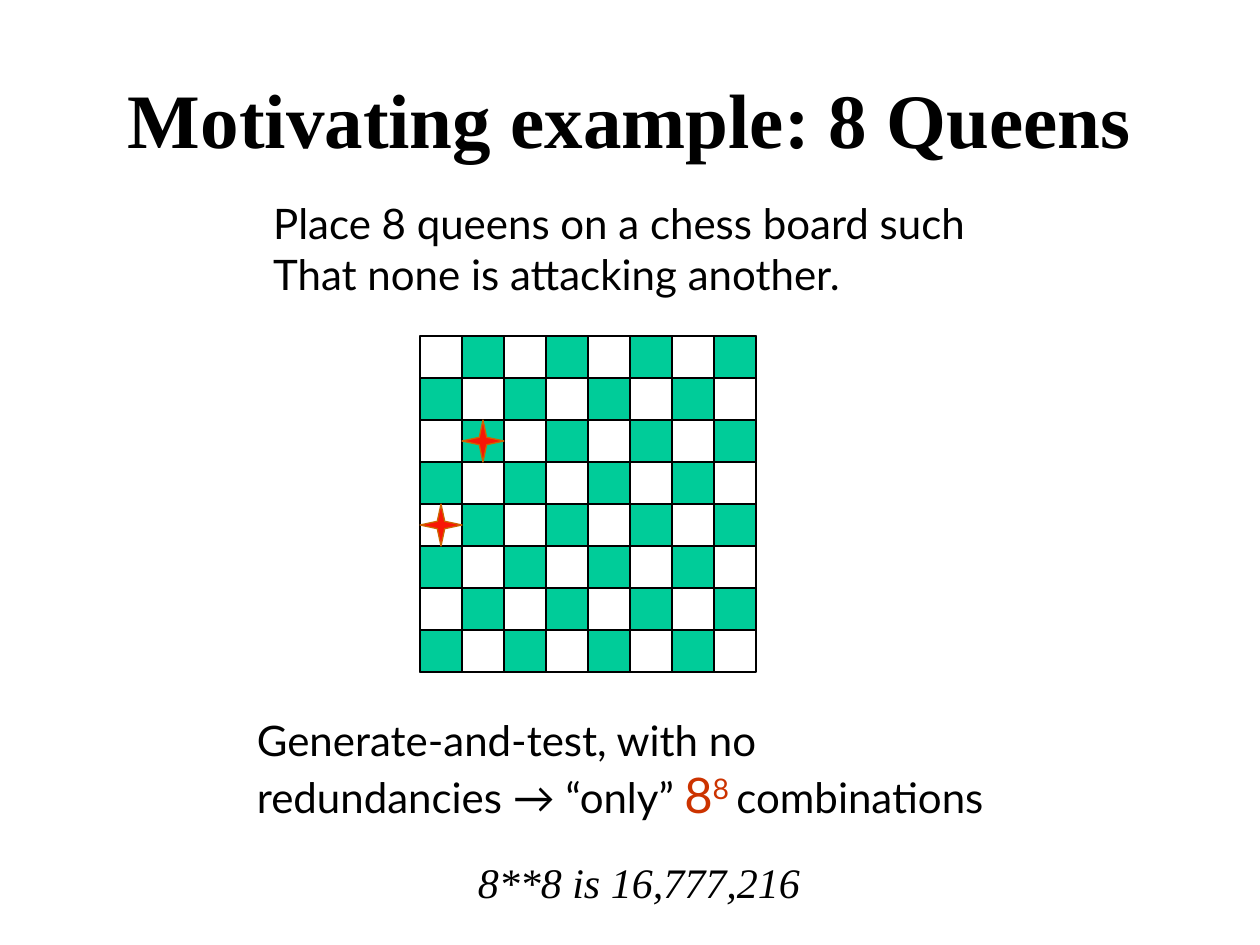
import pptx
import pptx.dml.color
import pptx.enum.shapes
import pptx.enum.text
import pptx.util

Inches = pptx.util.Inches
SHAPE = pptx.enum.shapes.MSO_SHAPE
ALIGN = pptx.enum.text.PP_ALIGN
ANCHOR = pptx.enum.text.MSO_ANCHOR

COLORS = {
    "ink": "000000",
    "square": "00CC99",
    "queen": "F81706",
    "queen_edge": "CC6600",
    "accent": "CC3300",
}
SANS, SERIF = "Lato", "Times New Roman"

SIZE = 8  # squares per side
CELL = 1 / 3
BOARD_LEFT, BOARD_TOP = 10 * CELL, 8 * CELL
QUEENS = [(4, 0), (2, 1)]  # row, column


def rgb(name):
    return pptx.dml.color.RGBColor.from_string(COLORS[name])


class SlideBuilder:
    """Holds the style and the current slide."""

    def __init__(self, prs):
        self.slide = prs.slides.add_slide(prs.slide_layouts[6])

    def shape(self, kind, left, top, size, fill=None, line="ink"):
        sp = self.slide.shapes.add_shape(
            kind, Inches(left), Inches(top), Inches(size), Inches(size))
        sp.shadow.inherit = False
        if fill:
            sp.fill.solid()
            sp.fill.fore_color.rgb = rgb(fill)
        else:
            sp.fill.background()
        sp.line.color.rgb = rgb(line)
        sp.line.width = pptx.util.Pt(0.75)
        return sp

    def square(self, row, col, kind=SHAPE.RECTANGLE, **style):
        return self.shape(kind, BOARD_LEFT + col * CELL,
                          BOARD_TOP + row * CELL, CELL, **style)

    def queen(self, row, col):
        sp = self.square(row, col, SHAPE.STAR_4_POINT,
                         fill="queen", line="queen_edge")
        sp.adjustments[0] = 0.125

    def text(self, box, lines, font=SANS, size=24, bold=False, italic=False,
             align=ALIGN.LEFT, anchor=ANCHOR.TOP, wrap=True):
        """Each line is a list of (text, run style) pairs."""
        sp = self.slide.shapes.add_textbox(*map(Inches, box))
        tf = sp.text_frame
        tf.word_wrap = wrap
        tf.vertical_anchor = anchor
        for i, runs in enumerate(lines):
            p = tf.add_paragraph() if i else tf.paragraphs[0]
            p.alignment = align
            p.font.name = font
            p.font.bold, p.font.italic = bold, italic
            for words, style in runs:
                r = p.add_run()
                r.text = words
                r.font.name = font
                r.font.size = pptx.util.Pt(style.get("size", size))
                r.font.color.rgb = rgb(style.get("color", "ink"))
                if style.get("superscript"):
                    r._r.get_or_add_rPr().set("baseline", "30000")


def main():
    prs = pptx.Presentation()
    prs.slide_width, prs.slide_height = Inches(10), Inches(7.5)
    s = SlideBuilder(prs)

    # Title
    s.text((0, 0.31, 10, 1.25), [[("Motivating example: 8 Queens", {})]],
           font=SERIF, size=44, bold=True, align=ALIGN.CENTER,
           anchor=ANCHOR.MIDDLE)

    # Chess board: outline, then the dark squares
    s.shape(SHAPE.RECTANGLE, BOARD_LEFT, BOARD_TOP, SIZE * CELL)
    for row in range(SIZE):
        for col in range((row + 1) % 2, SIZE, 2):
            s.square(row, col, fill="square")

    # Queens
    for row, col in QUEENS:
        s.queen(row, col)

    # Approach
    power = {"size": 28, "color": "accent"}
    s.text((1.94, 5.62, 6.05, 0.97), [
        [("Generate-and-test, with no", {})],
        [("redundancies → “only” ", {}), ("8", power),
         ("8 ", {**power, "superscript": True}), ("combinations", {})],
    ], wrap=False)

    # Problem statement
    s.text((2.07, 1.52, 5.81, 0.9), [
        [("Place 8 queens on a chess board such", {})],
        [("That none is attacking another.", {})],
    ], wrap=False)

    # Count
    s.text((1.7, 6.75, 6.74, 0.51), [[("8**8 is 16,777,216", {})]],
           font=SERIF, italic=True, align=ALIGN.CENTER)

    prs.save("out.pptx")


if __name__ == "__main__":
    main()
